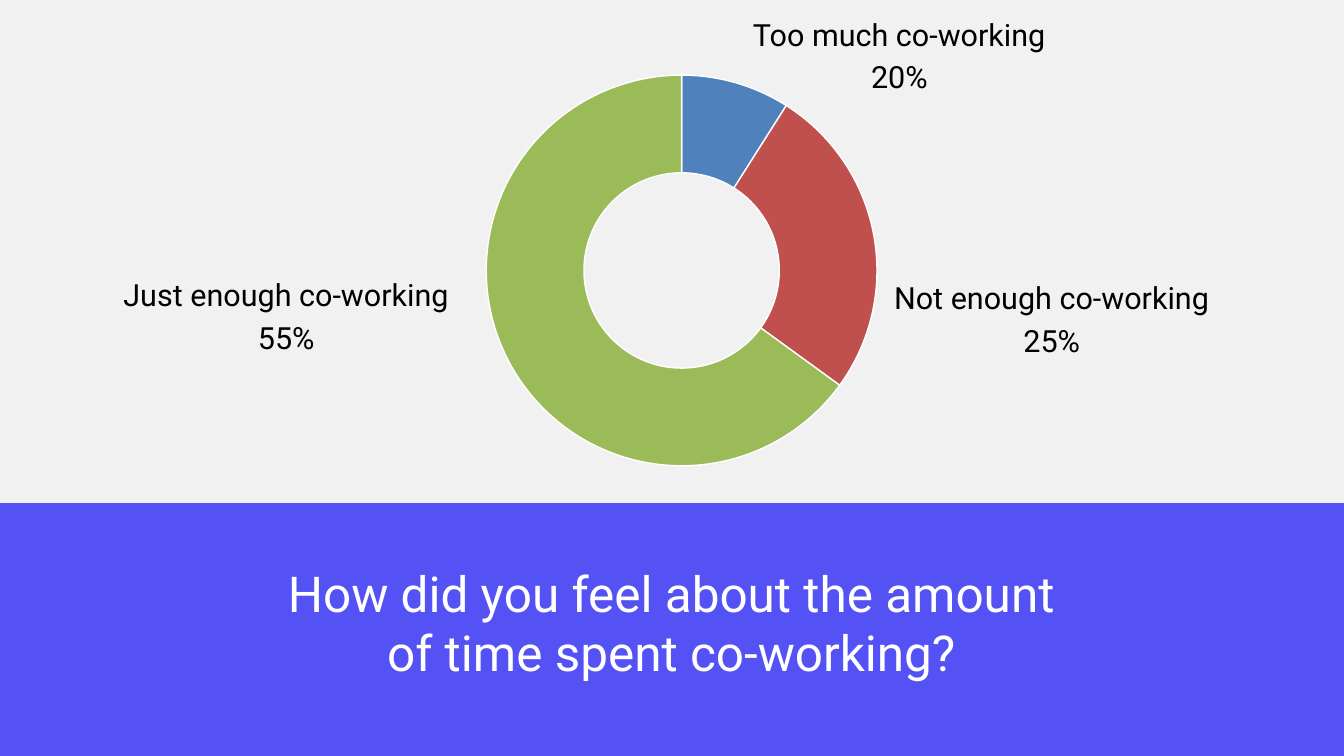
from pptx import Presentation
from pptx import util as u
from pptx.chart.data import CategoryChartData
from pptx.dml.color import RGBColor
from pptx.enum import chart as ch, shapes, text

GREY = RGBColor(0xF1, 0xF1, 0xF1)
VIOLET = RGBColor(0x54, 0x52, 0xF5)
BLACK = RGBColor(0, 0, 0)
WHITE = RGBColor(0xFF, 0xFF, 0xFF)
BLUE = RGBColor(0x4F, 0x81, 0xBD)
RED = RGBColor(0xC0, 0x50, 0x4D)
GREEN = RGBColor(0x9B, 0xBB, 0x59)

prs = Presentation()
prs.slide_width, prs.slide_height = u.Cm(50.8), u.Cm(28.58)
s = prs.slides.add_slide(prs.slide_layouts[6])
s.background.fill.solid()
s.background.fill.fore_color.rgb = GREY


def add_text(x, y, w, h, lines, size, spacing, color):
    tf = s.shapes.add_textbox(u.Cm(x), u.Cm(y), u.Cm(w), u.Cm(h)).text_frame
    tf.word_wrap = True
    tf.margin_left = tf.margin_right = tf.margin_top = tf.margin_bottom = 0
    tf.text = lines
    for p in tf.paragraphs:
        p.alignment = text.PP_ALIGN.CENTER
        p.line_spacing = u.Pt(spacing)
        for r in p.runs:
            r.font.name = "Roboto"
            r.font.size = u.Pt(size)
            r.font.color.rgb = color


# Question band
sp = s.shapes.add_shape(shapes.MSO_SHAPE.RECTANGLE, 0, u.Cm(19.02),
                        prs.slide_width, prs.slide_height - u.Cm(19.02))
sp.shadow.inherit = False
sp.fill.solid()
sp.fill.fore_color.rgb = VIOLET
sp.line.fill.background()

# Answer labels around the ring
for x, y, w, answer, share in [
    (4.42, 10.21, 12.8, "Just enough co-working", "55%"),
    (33.48, 10.31, 12.55, "Not enough co-working", "25%"),
    (28.24, 0.36, 11.51, "Too much co-working", "20%"),
]:
    add_text(x, y, w, 3.2, f"{answer}\n{share}", 32.7, 45.8, BLACK)

# Question
add_text(9.8, 21.29, 31.17, 4.52,
         "How did you feel about the amount of time spent co-working?",
         53, 63.6, WHITE)

# Doughnut chart
data = CategoryChartData()
data.categories = ["1", "2", "3"]
data.add_series("Series 1", (9, 26, 65))
chart = s.shapes.add_chart(ch.XL_CHART_TYPE.DOUGHNUT, u.Cm(13.61), u.Cm(2.49),
                           u.Cm(24.31), u.Cm(15.47), data).chart
chart.has_title = False
chart.has_legend = False
chart.font.name = "Calibri"
chart.font.size = u.Pt(10)
chart.font.color.rgb = BLACK
plot = chart.plots[0]
plot.vary_by_categories = True
for i, color in enumerate((BLUE, RED, GREEN)):
    fmt = plot.series[0].points[i].format
    fmt.fill.solid()
    fmt.fill.fore_color.rgb = color
    fmt.line.color.rgb = WHITE
    fmt.line.width = u.Pt(1.5)

prs.save("out.pptx")
